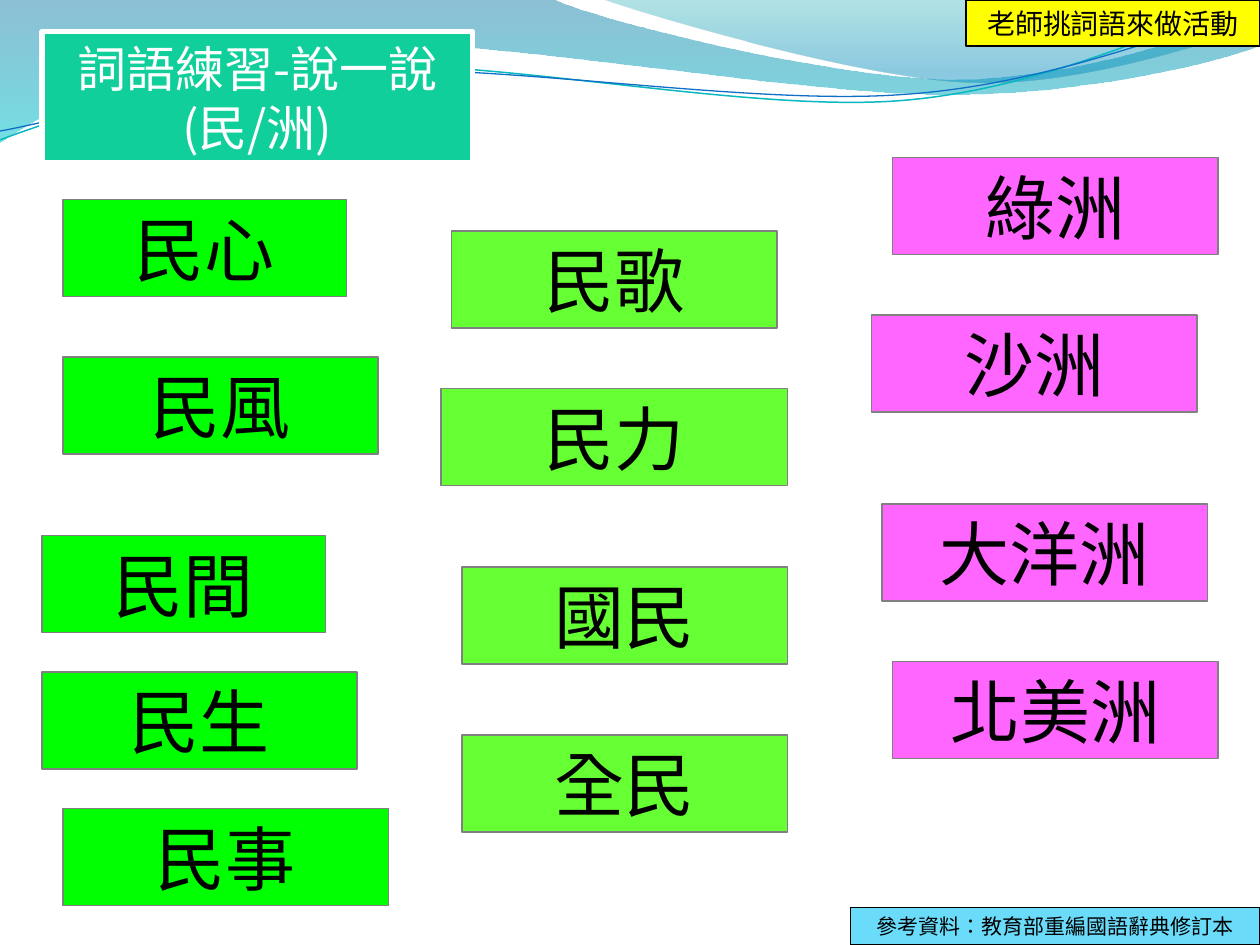
from dataclasses import dataclass

from lxml import etree
from pptx import Presentation
from pptx import util as u
from pptx.dml.color import RGBColor
from pptx.enum import shapes, text
from pptx.oxml.ns import qn


@dataclass(frozen=True)
class Theme:
    font: str = "Noto Sans CJK SC"
    language: str = "zh-TW"
    ink: str = "000000"
    white: str = "FFFFFF"
    card_edge: str = "808080"
    green: str = "00FF00"
    lime: str = "66FF33"
    pink: str = "FF66FF"
    title_fill: str = "10CF9B"
    hint_fill: str = "FFFF00"
    source_fill: str = "6BDBFA"
    teal_line: str = "0AB8BF"
    blue_line: str = "0F6FC6"
    broad_wave: tuple = ((0, "0074A1", 45), (1, "00C6CF", 55))
    right_wave: tuple = ((0, "00A1A9", 30), (0.8, "008BBF", 45))
    card_size: int = 40
    title_size: int = 28
    hint_size: int = 16
    source_size: int = 12


THEME = Theme()
WIDTH, HEIGHT = u.Inches(10), u.Inches(7.5)
COLUMNS, ROWS = 120, 90
CARD_ROWS = 9.25
UNITS_PER_INCH = 100

# Each word: text, left column, top row, columns wide
WORD_GROUPS = {
    THEME.green: [("民心", 6, 19, 27), ("民風", 6, 34, 30), ("民間", 4, 51, 27),
                  ("民生", 4, 64, 30), ("民事", 6, 77, 31)],
    THEME.lime: [("民歌", 43, 22, 31), ("民力", 42, 37, 33),
                 ("國民", 44, 54, 31), ("全民", 44, 70, 31)],
    THEME.pink: [("綠洲", 85, 15, 31), ("沙洲", 83, 30, 31),
                 ("大洋洲", 84, 48, 31), ("北美洲", 85, 63, 31)],
}

# Wave outlines in hundredths of an inch: a pair is a corner,
# six numbers are a cubic curve (two handles and an end)
BROAD_WAVE = [(0, 0), (440, 0), (476, 17, 664, 63, 758, 63),
              (853, 63, 958, 26, 1000, 9), (1000, 36),
              (983, 44, 870, 76, 746, 75), (622, 75, 382, 28, 257, 34),
              (129, 36, 46, 83, 0, 113)]
RIGHT_WAVE = [(479, 0), (509, 11, 682, 62, 769, 65),
              (856, 69, 961, 32, 1000, 21), (1000, 0)]
TEAL_CURVE = [(0, 111), (48, 93, 158, 57, 277, 52),
              (395, 47, 593, 89, 713, 80), (833, 71, 938, 15, 998, 0)]
BLUE_CURVE = [(0, 104), (47, 96, 164, 61, 283, 56),
              (403, 51, 597, 84, 717, 75), (836, 67, 941, 21, 1000, 6)]


def rgb(colour):
    return RGBColor.from_string(colour)


def grid_box(column, row, columns, rows):
    return (round(WIDTH * column / COLUMNS), round(HEIGHT * row / ROWS),
            round(WIDTH * columns / COLUMNS), round(HEIGHT * rows / ROWS))


def add_outline(slide, outline, close):
    """Draw straight segments, then join each curve's three into one cubic."""
    start, *segments = outline
    builder = slide.shapes.build_freeform(*start, scale=u.Inches(1) / UNITS_PER_INCH)
    for segment in segments:
        builder.add_line_segments(list(zip(segment[::2], segment[1::2])), close=False)
    if close:
        builder.add_line_segments([], close=True)
    wave = builder.convert_to_shape()
    wave.shadow.inherit = False

    straight = iter(list(wave.element.iter(qn("a:lnTo"))))
    for segment in segments:
        parts = [next(straight) for _ in range(len(segment) // 2)]
        if len(parts) == 3:
            parts[0].addprevious(curve := etree.Element(qn("a:cubicBezTo")))
            for part in parts:
                curve.append(part[0])
                part.getparent().remove(part)
    return wave


def add_wave(slide, outline, stops):
    """Stops are (position, colour, opacity in percent), from top to bottom."""
    wave = add_outline(slide, outline, True)
    wave.line.fill.background()
    wave.fill.gradient()
    wave.fill.gradient_angle = 270
    for stop, (position, colour, _) in zip(wave.fill.gradient_stops, stops):
        stop.position = position
        stop.color.rgb = rgb(colour)
    for tint, (_, _, opacity) in zip(wave.element.spPr.iter(qn("a:srgbClr")), stops):
        etree.SubElement(tint, qn("a:alpha")).set("val", str(opacity * 1000))


def add_curve(slide, outline, colour, weight):
    curve = add_outline(slide, outline, False)
    curve.fill.background()
    curve.line.color.rgb = rgb(colour)
    curve.line.width = u.Pt(weight)


def style_box(box, wording, fill, edge, weight, size, ink):
    box.fill.solid()
    box.fill.fore_color.rgb = rgb(fill)
    box.line.color.rgb = rgb(edge)
    box.line.width = u.Pt(weight)
    frame = box.text_frame
    frame.text = wording
    frame.word_wrap = True
    frame.auto_size = text.MSO_AUTO_SIZE.NONE
    frame.vertical_anchor = text.MSO_ANCHOR.MIDDLE
    paragraph = frame.paragraphs[0]
    paragraph.alignment = text.PP_ALIGN.CENTER
    font = paragraph.runs[0].font
    font.size = u.Pt(size)
    font.name = THEME.font
    font.color.rgb = rgb(ink)
    for properties in box.element.iter(qn("a:rPr")):
        properties.set("lang", THEME.language)
        etree.SubElement(properties, qn("a:ea")).set("typeface", THEME.font)


def add_label(slide, wording, place, fill, edge, size):
    label = slide.shapes.add_shape(shapes.MSO_SHAPE.RECTANGLE, *grid_box(*place))
    label.shadow.inherit = False
    style_box(label, wording, fill, edge, 0.75, size, THEME.ink)


def place_title(slide, wording):
    title = slide.shapes.title
    title.left, title.top, title.width, title.height = grid_box(4, 3, 41, 12.5)
    style_box(title, wording, THEME.title_fill, THEME.white, 3,
              THEME.title_size, THEME.white)
    title.element.getparent().append(title.element)  # in front of the waves


def main():
    deck = Presentation()
    deck.slide_width, deck.slide_height = WIDTH, HEIGHT
    slide = deck.slides.add_slide(deck.slide_layouts.get_by_name("Title Only"))

    add_wave(slide, BROAD_WAVE, THEME.broad_wave)
    add_wave(slide, RIGHT_WAVE, THEME.right_wave)
    add_curve(slide, TEAL_CURVE, THEME.teal_line, 0.85)
    add_curve(slide, BLUE_CURVE, THEME.blue_line, 0.75)

    place_title(slide, "詞語練習-說一說(民/洲)")
    for fill, words in WORD_GROUPS.items():
        for word, column, row, columns in words:
            add_label(slide, word, (column, row, columns, CARD_ROWS),
                      fill, THEME.card_edge, THEME.card_size)
    add_label(slide, "老師挑詞語來做活動", (92, 0, 28, 4.4),
              THEME.hint_fill, THEME.ink, THEME.hint_size)
    add_label(slide, "參考資料：教育部重編國語辭典修訂本", (81, 86.4, 39, 3.6),
              THEME.source_fill, THEME.ink, THEME.source_size)
    deck.save("out.pptx")


if __name__ == "__main__":
    main()
